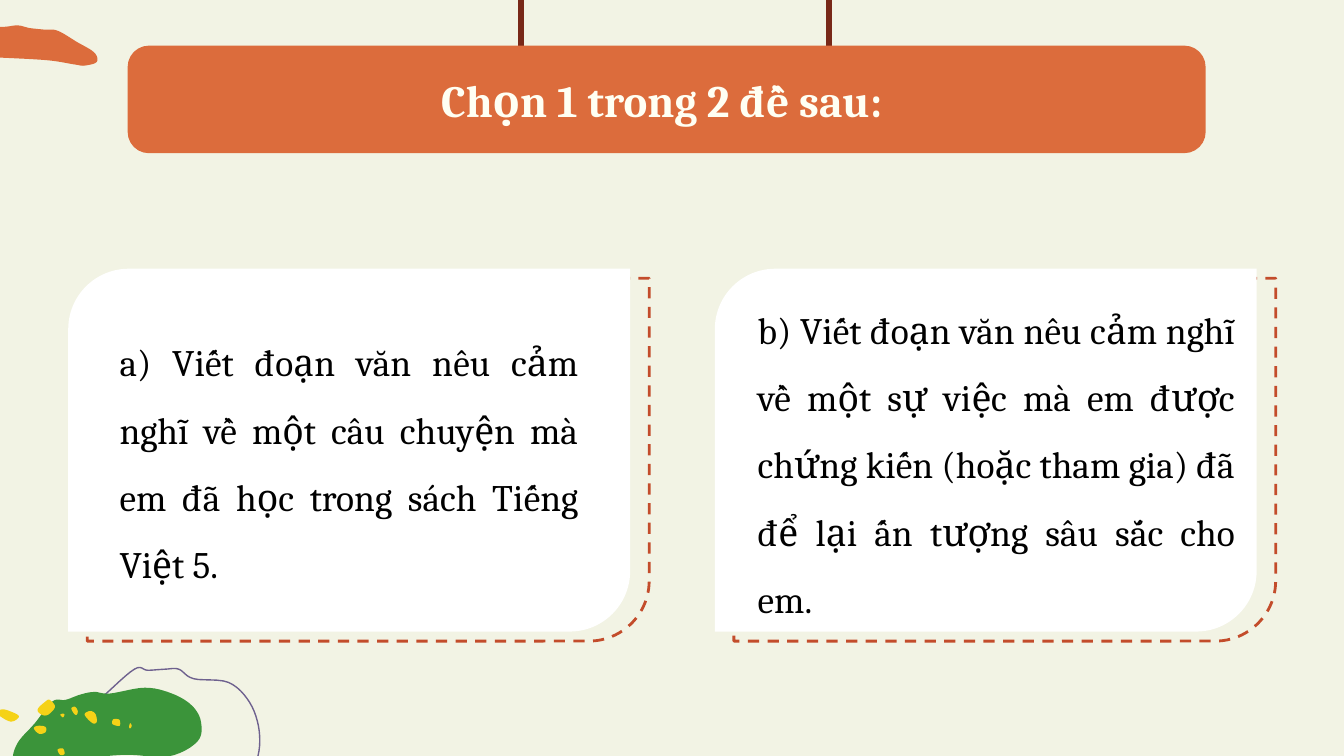
from lxml.etree import SubElement
from pptx import Presentation
from pptx.dml.color import RGBColor as Rgb
from pptx.enum.dml import MSO_LINE as Dash
from pptx.enum.shapes import MSO_CONNECTOR as Link, MSO_SHAPE as Kind
from pptx.enum.text import MSO_ANCHOR as Anchor, MSO_AUTO_SIZE as Fit, PP_ALIGN as Align
from pptx.oxml.ns import qn
from pptx.util import Cm, Pt

COLORS = {
    "paper": "F2F3E4", "orange": "DC6C3C", "brown": "782817", "rust": "C34C2B",
    "white": "FFFFFF", "cream": "FFFFF3", "black": "000000",
    "green": "3B943A", "yellow": "F5D217", "purple": "6E618E",
}

RING = [(4.32, 12.9), (4.72, 13.28), (4.9, 13.82), (4.85, 14.38), (4.52, 14.96),
        (3.81, 15.21), (3.02, 14.83), (2.82, 14.71), (1.93, 14.55), (1.14, 14.58),
        (1.07, 14.22), (1.37, 13.67), (1.93, 13.18), (2.54, 12.65), (2.79, 12.67),
        (3.12, 12.65), (3.38, 12.65), (3.66, 12.83)]
BUSH = [(2.74, 13), (3.25, 13.11), (3.63, 13.34), (3.8, 13.65), (3.73, 14.02),
        (3.18, 14.3), (2.31, 14.27), (1.19, 14.4), (0.48, 14.58), (0.25, 14.4),
        (0.33, 14.05), (0.66, 13.67), (0.99, 13.26), (1.24, 13.23), (1.52, 13.13),
        (1.78, 13.08), (2.08, 13.11)]
CLOUD = [(-0.64, 0.46), (-1.17, 0.51), (-1.55, 0.64), (-1.65, 0.97), (-1.09, 1.12),
         (-0.2, 1.09), (0.03, 1.09), (0.91, 1.14), (1.42, 1.22), (1.6, 1.24),
         (1.83, 1.17), (1.78, 0.99), (1.45, 0.79), (1.09, 0.58), (0.84, 0.56),
         (0.56, 0.53), (0.33, 0.48), (0, 0.51)]
SPOTS = [
    [(0.94, 13.23), (1.04, 13.36), (0.91, 13.51), (0.79, 13.51), (0.71, 13.41), (0.86, 13.26)],
    [(0.03, 13.41), (0.18, 13.44), (0.36, 13.54), (0.2, 13.64), (-0.05, 13.49)],
    [(1.7, 13.44), (1.8, 13.49), (1.83, 13.64), (1.75, 13.67), (1.6, 13.51)],
    [(1.42, 13.36), (1.47, 13.44), (1.45, 13.51), (1.4, 13.49), (1.35, 13.39)],
    [(1.19, 13.49), (1.22, 13.51), (1.19, 13.56), (1.14, 13.51)],
    [(2.18, 13.59), (2.26, 13.61), (2.26, 13.72), (2.13, 13.69), (2.13, 13.61)],
    [(2.46, 13.67), (2.49, 13.72), (2.46, 13.77), (2.44, 13.74)],
    [(0.71, 13.72), (0.86, 13.74), (0.86, 13.84), (0.74, 13.87), (0.64, 13.77)],
    [(1.19, 14.15), (1.22, 14.25), (1.14, 14.27), (1.09, 14.17)],
]


def color(name):
    return Rgb.from_string(COLORS[name])


def paint(shape, fill=None, line=None, width=1.5, dash=None):
    shape.shadow.inherit = False
    if fill:
        shape.fill.solid()
        shape.fill.fore_color.rgb = color(fill)
    else:
        shape.fill.background()
    if line:
        shape.line.color.rgb = color(line)
        shape.line.width = Pt(width)
        if dash:
            shape.line.dash_style = dash
    else:
        shape.line.fill.background()


def smooth(knots, steps=6):
    count = len(knots)
    curve = []
    for i in range(count):
        a, b, c, d = (knots[(i + k) % count] for k in (-1, 0, 1, 2))
        for step in range(steps):
            t = step / steps
            curve.append(tuple(
                Cm(q + t * (r - p) / 2 + t**2 * (2*p - 5*q + 4*r - s) / 2
                   + t**3 * (3*q - p - 3*r + s) / 2)
                for p, q, r, s in zip(a, b, c, d)))
    return curve


def blob(parent, outlines, **style):
    first, *rest = map(smooth, outlines)
    pen = parent.build_freeform(*first[0])
    pen.add_line_segments(first[1:], close=True)
    for curve in rest:
        pen.move_to(*curve[0])
        pen.add_line_segments(curve[1:], close=True)
    paint(pen.convert_to_shape(), **style)


def box(parent, kind, x, y, w, h, **style):
    shape = parent.add_shape(kind, Cm(x), Cm(y), Cm(w), Cm(h))
    paint(shape, **style)
    return shape


def cord(parent, x, top, end):
    line = parent.add_connector(Link.STRAIGHT, Cm(x), Cm(end), Cm(x), Cm(top))
    line.line.color.rgb = color("brown")
    line.line.width = Pt(3)
    SubElement(line._element.spPr, qn("a:effectLst"))


def write(shape, text, size=20, ink="black", bold=False, align=Align.JUSTIFY,
          space=None, anchor=Anchor.TOP, fit=Fit.NONE):
    frame = shape.text_frame
    frame.word_wrap = True
    frame.auto_size = fit
    frame.vertical_anchor = anchor
    para = frame.paragraphs[0]
    para.alignment = align
    para.line_spacing = space
    run = para.add_run()
    run.text = text
    run.font.name = "Cambria"
    run.font.size = Pt(size)
    run.font.bold = bold
    run.font.color.rgb = color(ink)


def banner(slide, text):
    group = slide.shapes.add_group_shape().shapes
    for x in (9.85, 15.67):
        cord(group, x, -0.02, 0.94)
    sign = box(group, Kind.ROUNDED_RECTANGLE, 2.44, 0.89, 20.32, 1.98,
               fill="orange", line="orange")
    sign.adjustments[0] = 0.19
    write(sign, text, size=24, ink="cream", bold=True, align=Align.CENTER,
          anchor=Anchor.MIDDLE)


def card(slide, x, width, area, text):
    group = slide.shapes.add_group_shape().shapes
    top, height = 5.08, 6.86
    kind = Kind.ROUND_2_DIAG_RECTANGLE
    box(group, kind, x + 0.36, top + 0.18, width, height, line="rust", dash=Dash.DASH)
    box(group, kind, x, top, width, height, fill="white")
    note = group.add_textbox(*map(Cm, area))
    write(note, text, space=1.5, fit=Fit.SHAPE_TO_FIT_TEXT)


def main():
    deck = Presentation()
    deck.slide_width, deck.slide_height = Cm(25.4), Cm(14.29)
    slide = deck.slides.add_slide(deck.slide_layouts[6])
    slide.background.fill.solid()
    slide.background.fill.fore_color.rgb = color("paper")
    blob(slide.shapes, [RING], line="purple", width=0.75)
    blob(slide.shapes, [BUSH], fill="green")
    blob(slide.shapes, SPOTS, fill="yellow")
    blob(slide.shapes, [CLOUD], fill="orange")
    banner(slide, "Chọn 1 trong 2 đề sau: ")
    card(slide, 1.29, 10.62, (2.01, 5.87, 9.17, 5.23),
         "a) Viết đoạn văn nêu cảm nghĩ về một câu chuyện mà em đã học "
         "trong sách Tiếng Việt 5. ")
    card(slide, 13.51, 10.24, (14.07, 5.26, 9.52, 6.5),
         "b) Viết đoạn văn nêu cảm nghĩ về một sự việc mà em được chứng kiến "
         "(hoặc tham gia) đã để lại ấn tượng sâu sắc cho em. ")
    deck.save("out.pptx")


if __name__ == "__main__":
    main()
